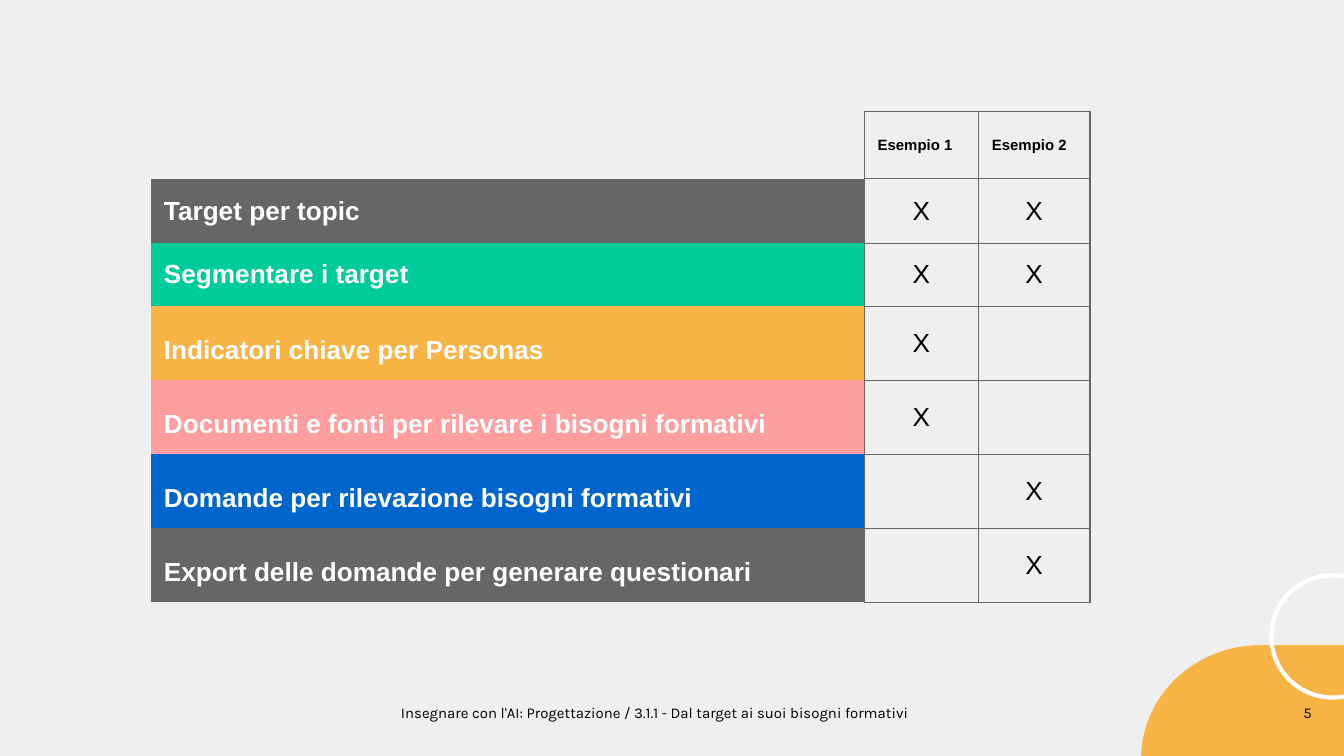
from lxml import etree
from pptx import Presentation
from pptx.dml.color import RGBColor
from pptx.enum.shapes import MSO_SHAPE
from pptx.enum.text import MSO_ANCHOR, PP_ALIGN
from pptx.oxml.ns import qn
from pptx.util import Inches, Pt

LEFT, CENTER = PP_ALIGN.LEFT, PP_ALIGN.CENTER
RIGHT, JUSTIFY = PP_ALIGN.RIGHT, PP_ALIGN.JUSTIFY
MIDDLE = MSO_ANCHOR.MIDDLE
DELAY, OVAL = MSO_SHAPE.FLOWCHART_DELAY, MSO_SHAPE.OVAL

BLACK = RGBColor(0x00, 0x00, 0x00)
WHITE = RGBColor(0xFF, 0xFF, 0xFF)
PAPER = RGBColor(0xEF, 0xEF, 0xEF)
GRAY = RGBColor(0x66, 0x66, 0x66)
GREEN = RGBColor(0x00, 0xCC, 0x99)
AMBER = RGBColor(0xF8, 0xB5, 0x46)
PINK = RGBColor(0xFF, 0x9E, 0x9E)
BLUE = RGBColor(0x00, 0x66, 0xCC)

WIDTHS = (5.31, 0.85, 0.83)
HEADS = ("Esempio 1", "Esempio 2")
# label, fill, row height, line spacing, marks
TOPICS = (
    ("Target per topic", GRAY, 0.48, 1, "XX"),
    ("Segmentare i target", GREEN, 0.47, 1, "XX"),
    ("Indicatori chiave per Personas", AMBER, 0.55, 1.5, "X "),
    ("Documenti e fonti per rilevare i bisogni formativi", PINK, 0.55, 1.5, "X "),
    ("Domande per rilevazione bisogni formativi", BLUE, 0.55, 1.5, " X"),
    ("Export delle domande per generare questionari", GRAY, 0.55, 1.5, " X"),
)


def write(frame, text, size, color, align, face="Arial", bold=False):
    para = frame.paragraphs[0]
    para.alignment = align
    run = para.add_run()
    run.text = text
    font = run.font
    font.name, font.size, font.bold = face, Pt(size), bold
    font.color.rgb = color
    return para


def add_note(slide, box, text, align):
    frame = slide.shapes.add_textbox(*map(Inches, box)).text_frame
    frame.word_wrap = True
    frame.margin_left = frame.margin_right = Inches(0.07)
    frame.margin_top = frame.margin_bottom = Inches(0.07)
    write(frame, text, 8, BLACK, align, "Karla")


def add_form(slide, kind, box, turn, fill=None, line=None):
    shape = slide.shapes.add_shape(kind, *map(Inches, box))
    shape.shadow.inherit = False
    shape.rotation = turn
    if fill is None:
        shape.fill.background()
    else:
        shape.fill.solid()
        shape.fill.fore_color.rgb = fill
    if line is None:
        shape.line.fill.background()
    else:
        shape.line.color.rgb = line
        shape.line.width = Pt(2.25)


def set_edges(cell, sides):
    """Draw gray borders on the given sides (of L, R, T, B) and clear the rest."""
    props = cell._tc.get_or_add_tcPr()
    for spot, side in enumerate("LRTB"):
        edge = etree.Element(qn("a:ln" + side), w=str(Pt(0.75)))
        if side in sides:
            fill = etree.SubElement(edge, qn("a:solidFill"))
            etree.SubElement(fill, qn("a:srgbClr"), val=str(GRAY))
        else:
            etree.SubElement(edge, qn("a:noFill"))
        props.insert(spot, edge)


def style_cell(cell, sides, fill=None):
    cell.vertical_anchor = MIDDLE
    cell.margin_left = cell.margin_right = Inches(0.1)
    cell.margin_top = cell.margin_bottom = Inches(0.1)
    if fill is None:
        cell.fill.background()
    else:
        cell.fill.solid()
        cell.fill.fore_color.rgb = fill
    set_edges(cell, sides)


def add_grid(slide):
    highs = [0.5] + [topic[2] for topic in TOPICS]
    size = (sum(WIDTHS), sum(highs))
    frame = slide.shapes.add_table(
        len(highs), len(WIDTHS), *map(Inches, (1.12, 0.83, *size)))
    table = frame.table
    table.first_row = table.horz_banding = False
    for col, wide in zip(table.columns, WIDTHS):
        col.width = Inches(wide)
    for row, high in zip(table.rows, highs):
        row.height = Inches(high)

    style_cell(table.cell(0, 0), "R")
    for col, head in enumerate(HEADS, 1):
        cell = table.cell(0, col)
        style_cell(cell, "LRTB")
        write(cell.text_frame, head, 8, BLACK, JUSTIFY, bold=True)

    for row, (label, fill, _, gap, marks) in enumerate(TOPICS, 1):
        cell = table.cell(row, 0)
        style_cell(cell, "R", fill)
        align = JUSTIFY if gap == 1 else LEFT
        para = write(cell.text_frame, label, 14, WHITE, align, bold=True)
        para.line_spacing = float(gap)
        for col, mark in enumerate(marks, 1):
            cell = table.cell(row, col)
            style_cell(cell, "LRTB")
            if mark == "X":
                write(cell.text_frame, mark, 14, BLACK, CENTER)


def main():
    deck = Presentation()
    deck.slide_width = Inches(10)
    deck.slide_height = Inches(10) * 9 // 16
    slide = deck.slides.add_slide(deck.slide_layouts[6])
    slide.background.fill.solid()
    slide.background.fill.fore_color.rgb = PAPER

    add_note(slide, (0.38, 5.17, 8.99, 0.29),
             "Insegnare con l'AI: Progettazione / 3.1.1 - "
             "Dal target ai suoi bisogni formativi", CENTER)
    add_form(slide, DELAY, (8.49, 4.8, 1.78, 1.69), 180, fill=AMBER)
    add_form(slide, OVAL, (9.46, 4.28, 0.91, 0.91), 270, line=WHITE)
    add_note(slide, (9.22, 5.17, 0.61, 0.46), "5", RIGHT)
    add_grid(slide)
    deck.save("out.pptx")


if __name__ == "__main__":
    main()
